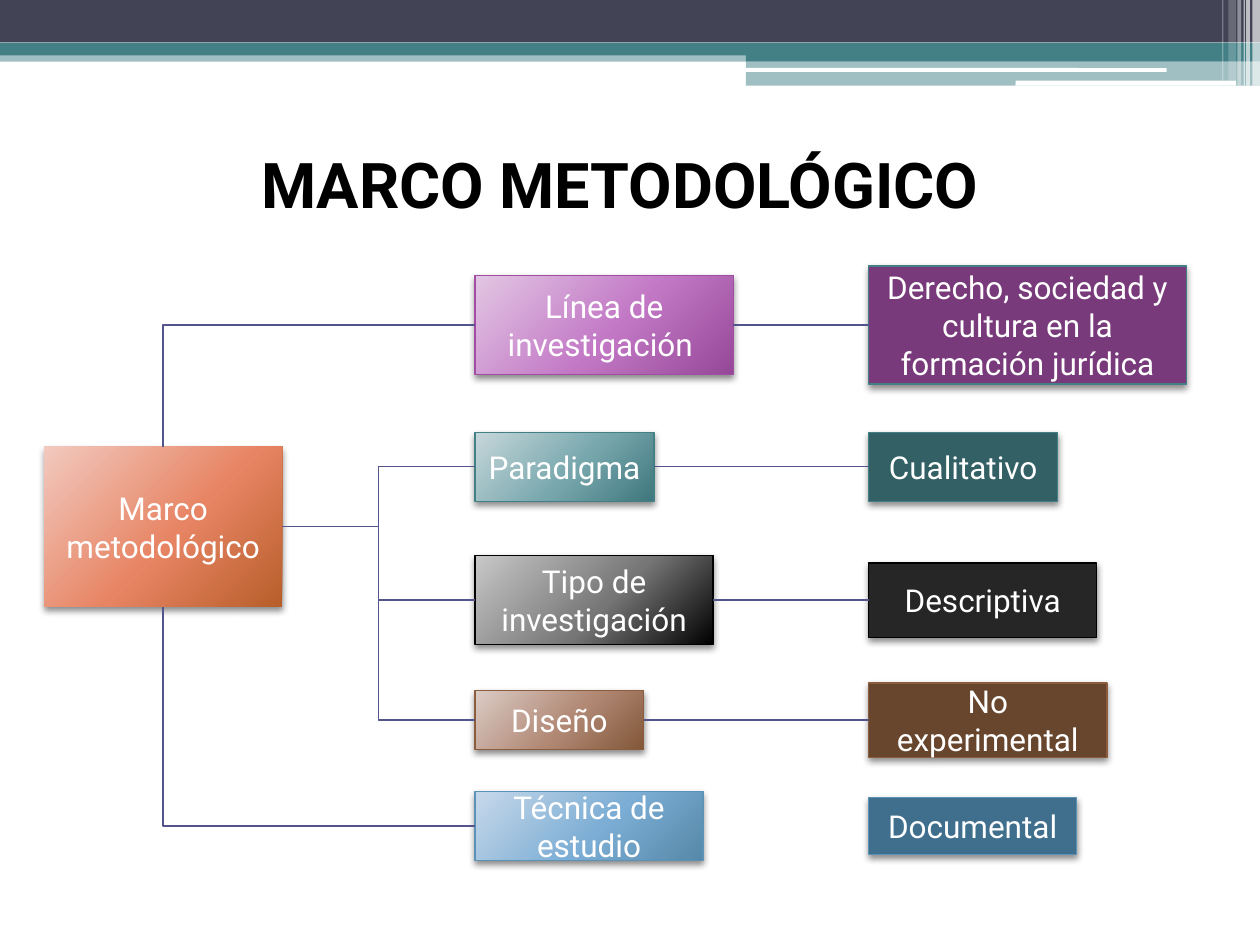
import pptx
import pptx.dml.color
import pptx.enum.shapes
import pptx.enum.text
import pptx.oxml
import pptx.oxml.ns
import pptx.util

WIDTH, HEIGHT = 10, 7.5
FONT = "Roboto"
SHAPES = pptx.enum.shapes.MSO_SHAPE
LINKS = pptx.enum.shapes.MSO_CONNECTOR
TOP, LEFT, BOTTOM, RIGHT = range(4)
COLUMNS = {"root": 3.5, "topic": 37.7, "answer": 68.95}

COLORS = {
    "white": "FFFFFF", "black": "000000", "navy": "424456", "teal": "438086",
    "link": "53548A", "purple": "A04DA3", "brown": "8B5D3D", "blue": "5C92B5",
    "deep purple": "783A7A", "deep teal": "326065", "charcoal": "262626",
    "deep brown": "68462E", "deep blue": "406F8D",
}

GRADIENTS = {
    "root": ("F2C9BF", "E78463", "B75E2A"),
    "purple": ("E2C6E3", "C277C5", "954898"),
    "teal": ("C7D7DA", "77A7AD", "3E777D"),
    "black": ("C8C8C8", "767676", "000000"),
    "brown": ("DBCCC6", "B18874", "825739"),
    "blue": ("C7D9EA", "7CADD4", "5688A9"),
}

BANDS = [
    ("rect", 0, 5.33, 100, 1.2, "teal", 50),
    ("rect", 0, 0, 100, 4.5, "navy", 100),
    ("rect", 0, 4.5, 100, 1.37, "teal", 100),
    ("rect", 59.2, 5.2, 40.8, 1.27, "teal", 100),
    ("rect", 59.2, 6.47, 40.8, 2.6, "teal", 50),
    ("round", 59.1, 7.2, 33.5, 0.4, "white", 100),
    ("round", 80.6, 8.53, 17.5, 0.53, "white", 100),
]

STRIPES = [
    (99.4, 0.6, 9.07, 65), (98.9, 0.3, 9.07, 65), (98.7, 0.1, 9.07, 60),
    (98.2, 0.3, 9.07, 40), (97.5, 0.6, 8.53, 20), (97, 0.1, 8.53, 30),
]

ROWS = [
    (34.4, ("Línea de investigación ", 20.5, 10.5, "purple", "purple"),
     ("Derecho, sociedad y cultura en la formación jurídica", 25.2, 12.5, "deep purple", "teal")),
    (49.4, ("Paradigma", 14.2, 7.33, "teal", "teal"),
     ("Cualitativo", 15, 7.33, "deep teal", "teal")),
    (63.5, ("Tipo de investigación", 18.9, 9.47, "black", "black"),
     ("Descriptiva", 18.1, 7.87, "charcoal", "black")),
    (76.2, ("Diseño", 13.4, 6.27, "brown", "brown"),
     ("No experimental", 18.9, 7.87, "deep brown", "brown")),
    (87.4, ("Técnica de estudio", 18.1, 7.33, "blue", "blue"),
     ("Documental", 16.5, 6, "deep blue", "blue")),
]


def across(share):
    """Turn a percentage of the slide width into a length."""
    return pptx.util.Inches(WIDTH * share / 100)


def down(share):
    """Turn a percentage of the slide height into a length."""
    return pptx.util.Inches(HEIGHT * share / 100)


def rgb(name):
    """Look up a named colour."""
    return pptx.dml.color.RGBColor.from_string(COLORS[name])


def element(xml):
    """Parse a DrawingML fragment."""
    head, rest = xml.split(" ", 1) if " " in xml.split(">")[0] else (xml[:-2], "/>")
    return pptx.oxml.parse_xml(f"{head} {pptx.oxml.ns.nsdecls('a')} {rest}")


def add_band(s, kind, x, y, w, h, color, opacity):
    """Draw one flat decoration of the header."""
    shape = SHAPES.ROUNDED_RECTANGLE if kind == "round" else SHAPES.RECTANGLE
    sp = s.shapes.add_shape(shape, across(x), down(y), across(w), down(h))
    sp.shadow.inherit = False
    sp.line.fill.background()
    sp.fill.solid()
    sp.fill.fore_color.rgb = rgb(color)
    if opacity < 100:
        clr = sp._element.spPr.find(".//" + pptx.oxml.ns.qn("a:srgbClr"))
        clr.append(element(f'<a:alpha val="{opacity * 1000}"/>'))


def add_run(p, text, size, color, bold=False):
    """Add a centred run of text to a paragraph."""
    p.alignment = pptx.enum.text.PP_ALIGN.CENTER
    r = p.add_run()
    r.text = text
    r.font.name, r.font.size, r.font.bold = FONT, pptx.util.Pt(size), bold
    r.font.color.rgb = rgb(color)


def fill_gradient(sp, stops):
    """Give a shape a three-stop gradient that runs from its top left corner."""
    gs = "".join(f'<a:gs pos="{pos}000"><a:srgbClr val="{c}"/></a:gs>'
                 for pos, c in zip((0, 55, 100), stops))
    sp.fill.background()
    spPr = sp._element.spPr
    spPr.replace(spPr.find(pptx.oxml.ns.qn("a:noFill")), element(
        f'<a:gradFill rotWithShape="1"><a:gsLst>{gs}</a:gsLst><a:path path="circle">'
        '<a:fillToRect l="-40000" t="-90000" r="140000" b="190000"/></a:path></a:gradFill>'))


def add_shadow(sp):
    """Drop a soft shadow below a shape."""
    sp.shadow.inherit = False
    sp._element.spPr.find(pptx.oxml.ns.qn("a:effectLst")).append(element(
        '<a:outerShdw blurRad="50800" dist="25400" dir="5400000" rotWithShape="0">'
        '<a:srgbClr val="000000"><a:alpha val="45000"/></a:srgbClr></a:outerShdw>'))


def add_box(s, column, middle, text, w, h, fill, line=None):
    """Draw a labelled box centred on a row."""
    sp = s.shapes.add_shape(SHAPES.RECTANGLE, across(COLUMNS[column]),
                            down(middle - h / 2), across(w), down(h))
    if fill in GRADIENTS:
        fill_gradient(sp, GRADIENTS[fill])
    else:
        sp.fill.solid()
        sp.fill.fore_color.rgb = rgb(fill)
    if line:
        sp.line.color.rgb = rgb(line)
        sp.line.width = pptx.util.Pt(0.75)
    else:
        sp.line.fill.background()
    add_shadow(sp)
    tf = sp.text_frame
    tf.word_wrap = True
    tf.vertical_anchor = pptx.enum.text.MSO_ANCHOR.MIDDLE
    add_run(tf.paragraphs[0], text, 18, "white")
    return sp


def add_link(s, kind, start, start_side, end, end_side):
    """Join the sides of two boxes."""
    c = s.shapes.add_connector(kind, 0, 0, 0, 0)
    c.begin_connect(start, start_side)
    c.end_connect(end, end_side)
    c.line.color.rgb = rgb("link")
    c.line.width = pptx.util.Pt(0.75)
    c._element.spPr.append(element("<a:effectLst/>"))
    return c


def add_corner(s, topic, root, root_side):
    """Join a topic to the root with a single right angle."""
    c = add_link(s, LINKS.ELBOW, topic, LEFT, root, root_side)
    c._element.spPr.find(pptx.oxml.ns.qn("a:prstGeom")).set("prst", "bentConnector2")


def add_title(s, text):
    """Place and format the slide title."""
    sp = s.shapes.title
    sp.left, sp.top, sp.width, sp.height = across(4.2), down(14.27), across(90), down(10.27)
    sp.text_frame.vertical_anchor = pptx.enum.text.MSO_ANCHOR.MIDDLE
    add_run(sp.text_frame.paragraphs[0], text, 36, "black", True)


def main():
    """Build the slide and save it."""
    prs = pptx.Presentation()
    prs.slide_width, prs.slide_height = across(100), down(100)
    s = prs.slides.add_slide(prs.slide_layouts[5])
    for band in BANDS:
        add_band(s, *band)
    for x, w, h, opacity in STRIPES:
        add_band(s, "rect", x, 0, w, h, "white", opacity)
    add_title(s, "MARCO METODOLÓGICO")
    pairs = [(add_box(s, "topic", middle, *topic), add_box(s, "answer", middle, *answer))
             for middle, topic, answer in ROWS]
    root = add_box(s, "root", 55.73, "Marco metodológico", 18.9, 16.93, "root")
    add_corner(s, pairs[0][0], root, TOP)
    add_corner(s, pairs[-1][0], root, BOTTOM)
    for topic, _ in pairs[1:-1]:
        add_link(s, LINKS.ELBOW, root, RIGHT, topic, LEFT)
    for topic, answer in pairs[:-1]:
        add_link(s, LINKS.STRAIGHT, topic, RIGHT, answer, LEFT)
    prs.save("out.pptx")


if __name__ == "__main__":
    main()
